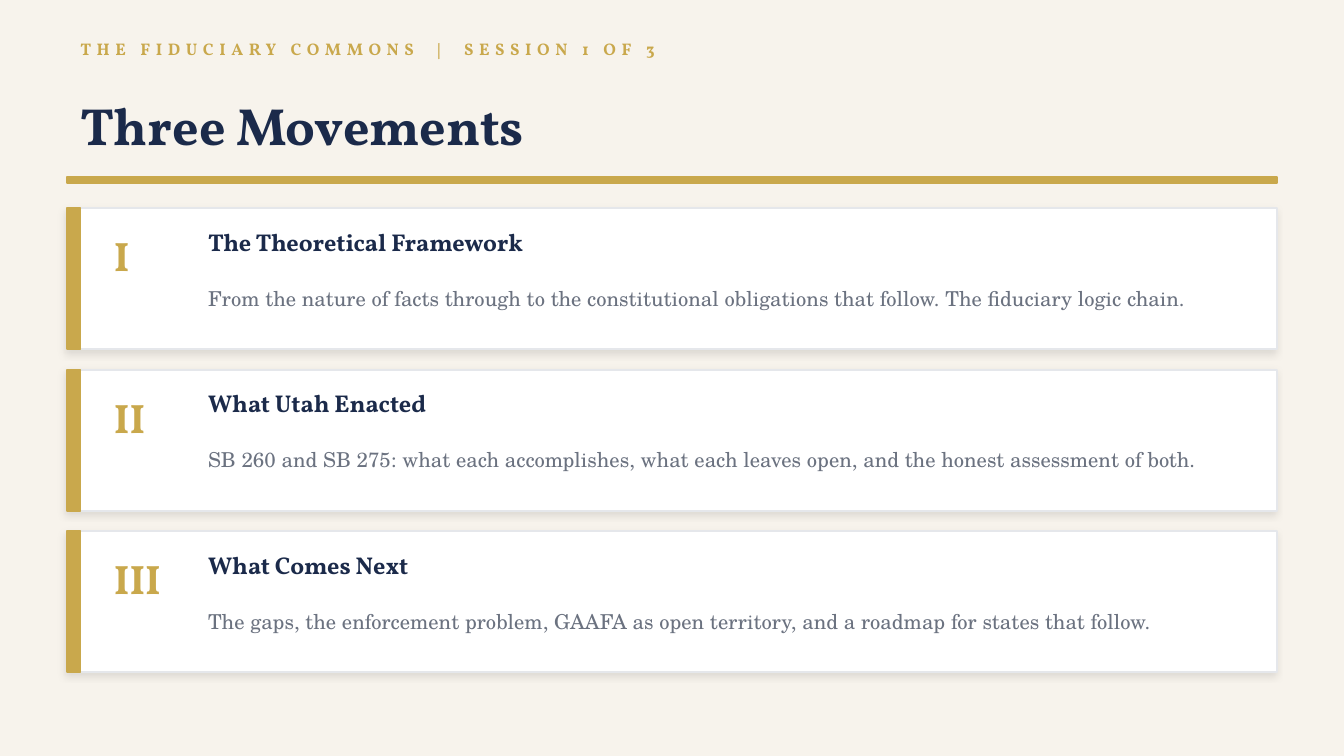
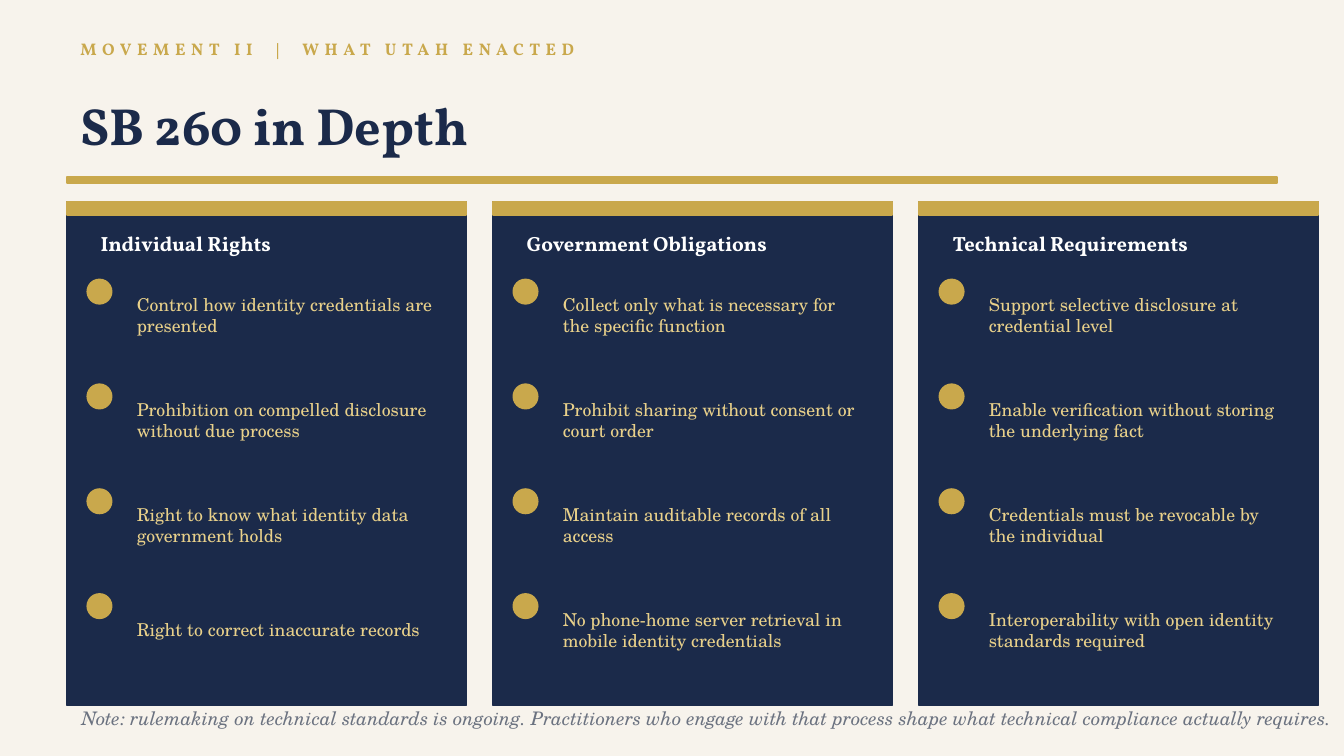
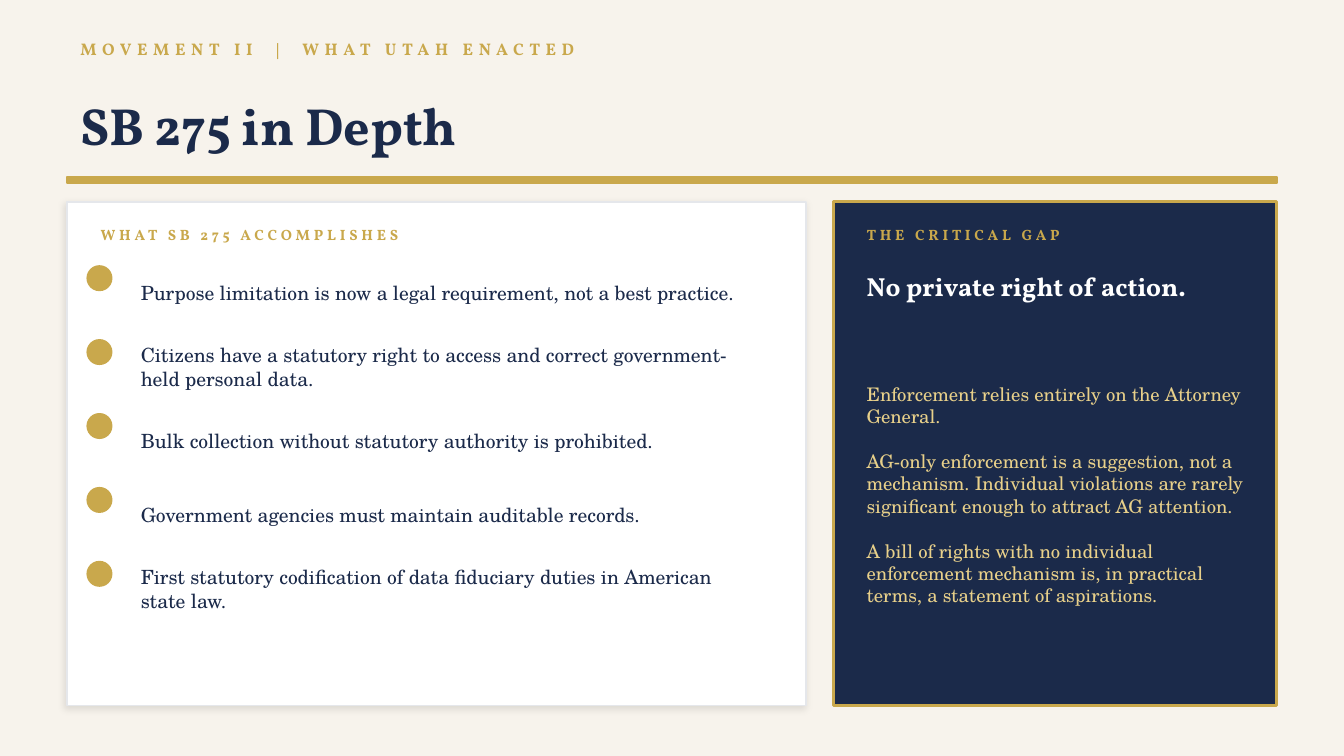
from lxml.etree import SubElement
from pptx import Presentation
from pptx.dml.color import RGBColor
from pptx.enum.shapes import MSO_SHAPE as Preset
from pptx.enum.text import MSO_ANCHOR as Anchor, PP_ALIGN as Align
from pptx.oxml.ns import qn
from pptx.util import Inches, Pt

# Shared colours, fonts and measures
CREAM = RGBColor(0xF7, 0xF3, 0xEC)
GOLD = RGBColor(0xC9, 0xA8, 0x4C)
PALE_GOLD = RGBColor(0xE8, 0xD0, 0x8A)
NAVY = RGBColor(0x1B, 0x2A, 0x4A)
WHITE = RGBColor(0xFF, 0xFF, 0xFF)
GREY = RGBColor(0x6B, 0x72, 0x80)
BORDER = RGBColor(0xE5, 0xE7, 0xEB)
HEADING_FONT = "Vollkorn"
BODY_FONT = "TeX Gyre Schola"
MARGIN = 0.5
CONTENT_WIDTH = 9
PANEL_TOP, PANEL_HEIGHT = 1.5, 3.75
PADDING = 0.15
DOT_SIZE = 0.18

MOVEMENT_TWO = "MOVEMENT II  |  WHAT UTAH ENACTED"

MOVEMENTS = [
    ("I", "The Theoretical Framework",
     "From the nature of facts through to the constitutional obligations that follow. "
     "The fiduciary logic chain."),
    ("II", "What Utah Enacted",
     "SB 260 and SB 275: what each accomplishes, what each leaves open, "
     "and the honest assessment of both."),
    ("III", "What Comes Next",
     "The gaps, the enforcement problem, GAAFA as open territory, "
     "and a roadmap for states that follow."),
]

SB260_PILLARS = [
    ("Individual Rights", [
        "Control how identity credentials are presented",
        "Prohibition on compelled disclosure without due process",
        "Right to know what identity data government holds",
        "Right to correct inaccurate records"]),
    ("Government Obligations", [
        "Collect only what is necessary for the specific function",
        "Prohibit sharing without consent or court order",
        "Maintain auditable records of all access",
        "No phone-home server retrieval in mobile identity credentials"]),
    ("Technical Requirements", [
        "Support selective disclosure at credential level",
        "Enable verification without storing the underlying fact",
        "Credentials must be revocable by the individual",
        "Interoperability with open identity standards required"]),
]
RULEMAKING_NOTE = (
    "Note: rulemaking on technical standards is ongoing. Practitioners who engage "
    "with that process shape what technical compliance actually requires.")

SB275_GAINS = [
    "Purpose limitation is now a legal requirement, not a best practice.",
    "Citizens have a statutory right to access and correct government-held personal data.",
    "Bulk collection without statutory authority is prohibited.",
    "Government agencies must maintain auditable records.",
    "First statutory codification of data fiduciary duties in American state law.",
]
ENFORCEMENT_GAP = [
    "Enforcement relies entirely on the Attorney General.",
    "AG-only enforcement is a suggestion, not a mechanism. Individual violations "
    "are rarely significant enough to attract AG attention.",
    "A bill of rights with no individual enforcement mechanism is, in practical "
    "terms, a statement of aspirations.",
]


# Element builders
def add_text(slide, text, left, top, width, height, *, size, color, font=BODY_FONT,
             bold=False, italic=False, tracking=0, align=Align.LEFT, gap=0):
    """Place text; a list gives one paragraph per item, set apart by gap points."""
    frame = slide.shapes.add_textbox(
        Inches(left), Inches(top), Inches(width), Inches(height)).text_frame
    frame.word_wrap = True
    frame.vertical_anchor = Anchor.MIDDLE
    for index, content in enumerate([text] if isinstance(text, str) else text):
        paragraph = frame.add_paragraph() if index else frame.paragraphs[0]
        paragraph.alignment = align
        if index and gap:
            paragraph.space_before = Pt(gap)
        run = paragraph.add_run()
        run.text = content
        run.font.name = font
        run.font.size = Pt(size)
        run.font.bold = bold
        run.font.italic = italic
        run.font.color.rgb = color
        if tracking:
            run._r.get_or_add_rPr().set("spc", str(tracking * 100))


def add_heading(slide, text, *place, **style):
    add_text(slide, text, *place, font=HEADING_FONT, bold=True, **style)


def add_block(slide, left, top, width, height, fill, border=None, border_width=1,
              preset=Preset.RECTANGLE):
    block = slide.shapes.add_shape(
        preset, Inches(left), Inches(top), Inches(width), Inches(height))
    block.shadow.inherit = False
    block.fill.solid()
    block.fill.fore_color.rgb = fill
    block.line.color.rgb = border or fill
    block.line.width = Pt(border_width)
    return block


def add_card(slide, left, top, width, height):
    """White card with a faint drop shadow."""
    card = add_block(slide, left, top, width, height, WHITE, BORDER)
    effects = card._element.spPr.find(qn("a:effectLst"))
    shadow = SubElement(effects, qn("a:outerShdw"), blurRad=str(Pt(4)), dist=str(Pt(2)),
                        dir=str(135 * 60000), algn="bl", rotWithShape="0")
    black = SubElement(shadow, qn("a:srgbClr"), val="000000")
    SubElement(black, qn("a:alpha"), val="10000")


def add_dotted_list(slide, items, left, top, pitch, indent, drop, width, height, **style):
    """Gold dots with text beside them; each dot sits drop below its text box's top."""
    for row, item in enumerate(items):
        y = top + row * pitch
        add_block(slide, left, y + drop, DOT_SIZE, DOT_SIZE, GOLD, preset=Preset.OVAL)
        add_text(slide, item, left + indent, y, width, height, **style)


def add_titled_slide(deck, kicker, title):
    slide = deck.slides.add_slide(deck.slide_layouts[6])
    slide.background.fill.solid()
    slide.background.fill.fore_color.rgb = CREAM
    add_heading(slide, kicker, MARGIN, 0.22, CONTENT_WIDTH, 0.28,
                size=9, color=GOLD, tracking=3)
    add_heading(slide, title, MARGIN, 0.55, CONTENT_WIDTH, 0.75, size=28, color=NAVY)
    add_block(slide, MARGIN, 1.32, CONTENT_WIDTH, 0.04, GOLD)
    return slide


def add_movement(slide, top, numeral, name, summary):
    height = 1.05
    add_card(slide, MARGIN, top, CONTENT_WIDTH, height)
    add_block(slide, MARGIN, top, 0.1, height, GOLD)
    add_heading(slide, numeral, 0.75, top + 0.1, 0.6, 0.5, size=22, color=GOLD)
    add_heading(slide, name, 1.45, top + 0.1, 7.8, 0.3, size=13, color=NAVY)
    add_text(slide, summary, 1.45, top + 0.42, 7.8, 0.5, size=11, color=GREY)


def add_pillar(slide, left, name, points):
    width = 2.97
    add_block(slide, left, PANEL_TOP, width, PANEL_HEIGHT, NAVY)
    add_block(slide, left, PANEL_TOP, width, 0.1, GOLD)
    add_heading(slide, name, left + PADDING, 1.66, 2.65, 0.3, size=11, color=WHITE)
    add_dotted_list(slide, points, left + PADDING, 2.02, pitch=0.78, indent=0.27,
                    drop=0.06, width=2.4, height=0.65, size=9.5, color=PALE_GOLD)


def add_panel_label(slide, text, left, width):
    add_heading(slide, text, left, 1.62, width, 0.25, size=8, color=GOLD, tracking=2)


# Slides
def build_movements(deck):
    slide = add_titled_slide(
        deck, "THE FIDUCIARY COMMONS  |  SESSION 1 OF 3", "Three Movements")
    for row, movement in enumerate(MOVEMENTS):
        add_movement(slide, 1.55 + row * 1.2, *movement)


def build_sb260(deck):
    slide = add_titled_slide(deck, MOVEMENT_TWO, "SB 260 in Depth")
    for column, (name, points) in enumerate(SB260_PILLARS):
        add_pillar(slide, MARGIN + column * 3.17, name, points)
    add_text(slide, RULEMAKING_NOTE, MARGIN, 5.2, 9.5, 0.28,
             size=10, color=GREY, italic=True, align=Align.CENTER)


def build_sb275(deck):
    slide = add_titled_slide(deck, MOVEMENT_TWO, "SB 275 in Depth")

    # What the bill accomplishes
    gains_left = MARGIN + PADDING
    add_card(slide, MARGIN, PANEL_TOP, 5.5, PANEL_HEIGHT)
    add_panel_label(slide, "WHAT SB 275 ACCOMPLISHES", gains_left, 5.2)
    add_dotted_list(slide, SB275_GAINS, gains_left, 1.93, pitch=0.55, indent=0.3,
                    drop=0.05, width=4.8, height=0.5, size=10.5, color=NAVY)

    # The critical gap
    gap_panel_left = 6.2
    gap_left = gap_panel_left + PADDING
    add_block(slide, gap_panel_left, PANEL_TOP, 3.3, PANEL_HEIGHT, NAVY, GOLD, 1.5)
    add_panel_label(slide, "THE CRITICAL GAP", gap_left, 3)
    add_heading(slide, "No private right of action.", gap_left, 1.95, 3, 0.35,
                size=14, color=WHITE)
    add_text(slide, ENFORCEMENT_GAP, gap_left, 2.38, 3, 2.6,
             size=10, color=PALE_GOLD, gap=12)


def main():
    deck = Presentation()
    deck.slide_width = Inches(10)
    deck.slide_height = Inches(10) * 9 // 16
    build_movements(deck)
    build_sb260(deck)
    build_sb275(deck)
    deck.save("out.pptx")


if __name__ == "__main__":
    main()
